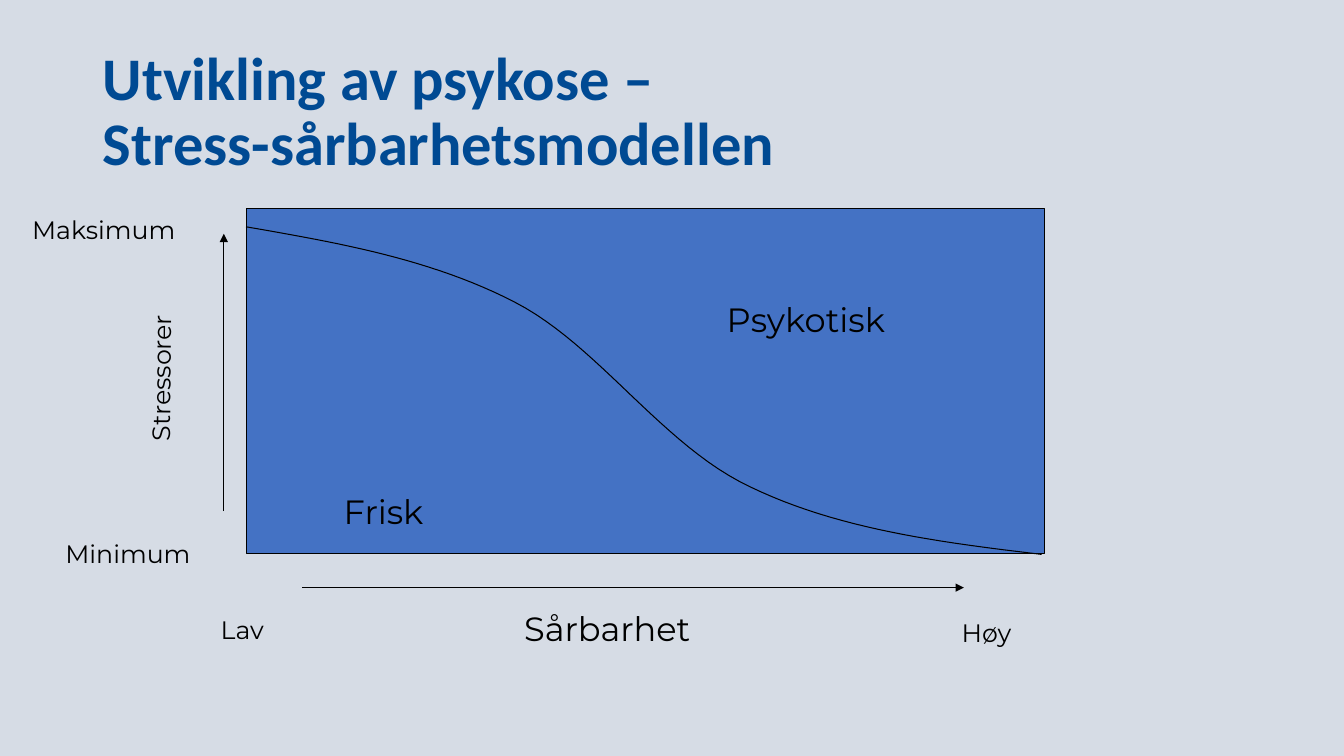
from lxml.etree import SubElement
from pptx import Presentation
from pptx.dml.color import RGBColor
from pptx.enum.shapes import MSO_CONNECTOR, MSO_SHAPE
from pptx.enum.text import MSO_ANCHOR, MSO_AUTO_SIZE, PP_ALIGN
from pptx.oxml.ns import qn
from pptx.util import Inches, Pt

CELL = Inches(0.1)  # grid pitch: 133.3 columns by 75 rows
BLACK = "000000"


def grid(*cells):
    return [round(n * CELL) for n in cells]


def paint(part, code):
    if hasattr(part, "solid"):
        part.solid()
        part.fore_color.rgb = RGBColor.from_string(code)
    elif hasattr(part, "width"):
        part.fill.solid()
        part.fill.fore_color.rgb = RGBColor.from_string(code)
        part.width = Pt(0.75)
    else:
        part.color.rgb = RGBColor.from_string(code)


deck = Presentation()
deck.slide_width, deck.slide_height = grid(133.3, 75)
slide = deck.slides.add_slide(deck.slide_layouts[5])
shapes = slide.shapes
paint(slide.background.fill, "D6DCE5")

# Title
title = shapes.title
title.left, title.top, title.width, title.height = grid(9.2, 4, 115, 14.5)
frame = title.text_frame
frame.text = "Utvikling av psykose –\vStress-sårbarhetsmodellen"
frame.auto_size = MSO_AUTO_SIZE.NONE
frame.vertical_anchor = MSO_ANCHOR.MIDDLE
head = frame.paragraphs[0]
head.alignment = PP_ALIGN.LEFT
head.line_spacing = 0.9
head.font.name, head.font.size, head.font.bold = "Calibri", Pt(43.2), True
paint(head.font, "004A93")

# Model area
area = shapes.add_shape(MSO_SHAPE.RECTANGLE, *grid(24.4, 20.7, 79.2, 34.2))
area.shadow.inherit = False
paint(area.fill, "4472C4")
paint(area.line, BLACK)

# Border between healthy and psychotic: three Bezier arcs
knots = [(24.4, 22.5), (33.6, 24.1), (42.8, 25.7), (51.1, 30), (59.4, 34.3),
         (65.7, 44.2), (74.4, 48.3), (83.1, 52.5), (93.2, 53.8), (103.3, 55)]
STEPS = 24
points = []
for first in range(0, 9, 3):
    arc = knots[first:first + 4]
    for step in range(1, STEPS + 1):
        t = step / STEPS
        share = [(1 - t) ** 3, 3 * t * (1 - t) ** 2, 3 * t * t * (1 - t), t ** 3]
        points.append(grid(*(sum(s * k[axis] for s, k in zip(share, arc))
                             for axis in (0, 1))))
path = shapes.build_freeform(*grid(*knots[0]))
path.add_line_segments(points, close=False)
curve = path.convert_to_shape()
curve.shadow.inherit = False
curve.fill.background()
paint(curve.line, BLACK)

# Axis arrows
for ends in [(30, 58.3, 95.6, 58.3), (22.2, 50.7, 22.2, 23.2)]:
    arrow = shapes.add_connector(MSO_CONNECTOR.STRAIGHT, *grid(*ends))
    paint(arrow.line, BLACK)
    props = arrow.element.spPr
    SubElement(props.find(qn("a:ln")), qn("a:tailEnd"), type="triangle")
    SubElement(props, qn("a:effectLst"))

# Labels: text, left, top, width, size, wrap, turn
labels = [
    ("Sårbarhet", 51, 59.8, 20.1, 24, False, 0),
    ("Lav", 20.9, 60.5, 6.9, 18, False, 0),
    ("Høy", 94.4, 60.8, 11.7, 18, True, 0),
    ("Stressorer", 7.7, 34.5, 16.5, 18, False, 270.6),
    ("Minimum", 5.5, 52.9, 14.5, 18, False, 0),
    ("Maksimum", 2.2, 20.8, 16.9, 18, False, 0),
    ("Frisk", 33.1, 48.2, 17.8, 24, True, 0),
    ("Psykotisk", 71.1, 29.2, 26.7, 24, True, 0),
]
for text, left, top, width, size, wrap, turn in labels:
    high = 5 if size == 24 else 4
    box = shapes.add_textbox(*grid(left, top, width, high))
    box.rotation = turn
    frame = box.text_frame
    frame.text = text
    frame.word_wrap = wrap
    frame.auto_size = MSO_AUTO_SIZE.SHAPE_TO_FIT_TEXT
    font = frame.paragraphs[0].font
    font.name, font.size = "Montserrat", Pt(size)
    paint(font, BLACK)

deck.save("out.pptx")
